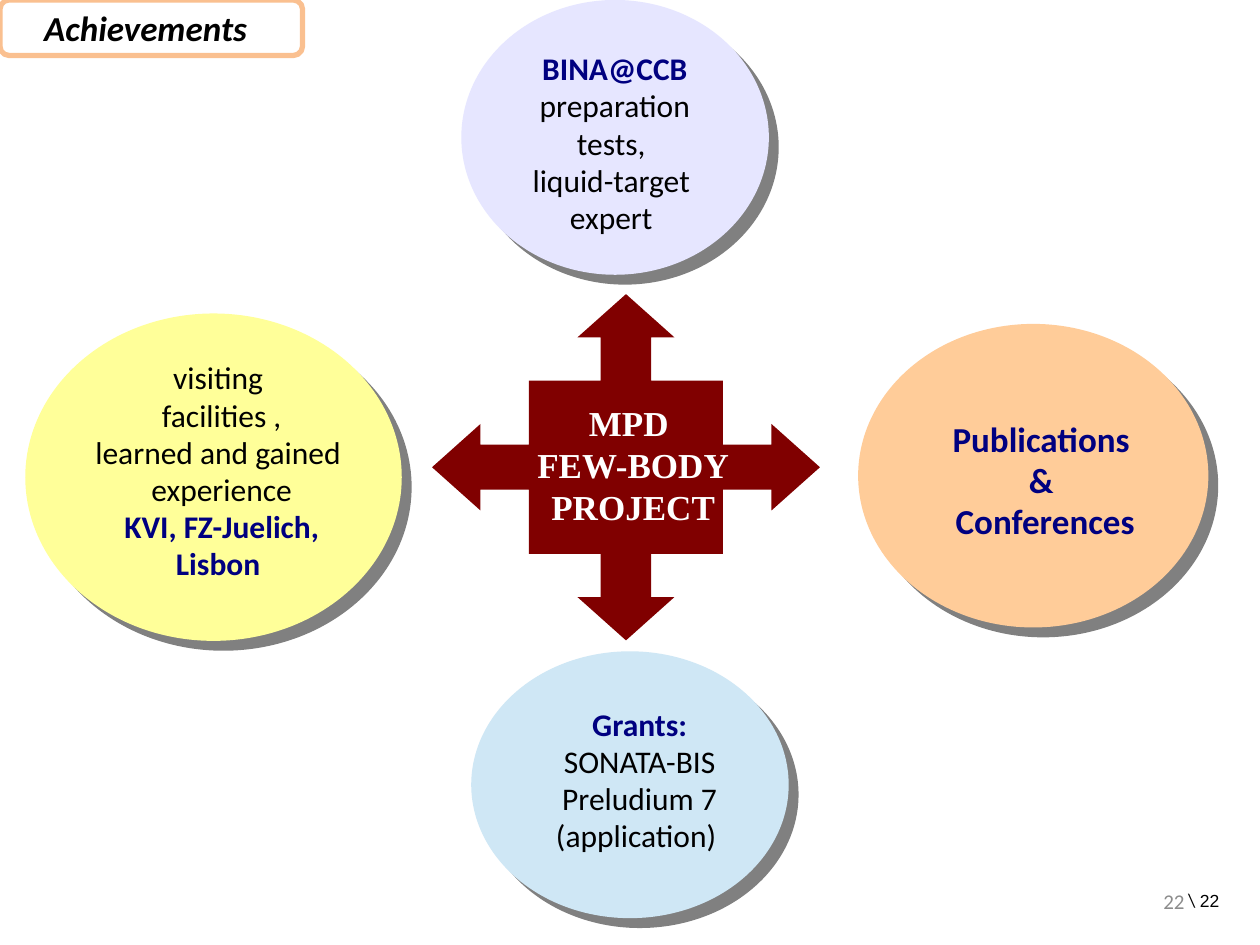
"""Build the Achievements slide: a central project cross with four themed bubbles."""
from lxml import etree
from pptx import Presentation, util as u
from pptx.dml.color import RGBColor
from pptx.enum import shapes, text
from pptx.oxml import ns

COLORS = {
    "black": "000000", "navy": "000080", "white": "FFFFFF", "maroon": "800000",
    "yellow": "FFFF99", "lavender": "E6E6FF", "peach": "FFCC99", "sky": "CFE7F5",
    "shadow": "808080", "frame": "FAC090", "number": "8C8C8C",
}


def write(frame, lines, size, font="Calibri", align=text.PP_ALIGN.CENTER, spacing=None):
    """Fill a text frame with (wording, colour, bold) lines."""
    frame.text = "\n".join(wording for wording, _, _ in lines)
    for paragraph, (_, color, bold) in zip(frame.paragraphs, lines):
        paragraph.alignment = align
        paragraph.line_spacing = spacing
        for run in paragraph.runs:
            run.font.name, run.font.size, run.font.bold = font, u.Pt(size), bold
            run.font.color.rgb = RGBColor.from_string(COLORS[color])


def add_shadow(effects, color, blur, distance):
    """Add an outer shadow at 45 degrees to an effect list."""
    shadow = etree.SubElement(effects, ns.qn("a:outerShdw"), blurRad=str(u.Pt(blur)),
                              dist=str(u.Pt(distance)), dir="2700000")
    return etree.SubElement(shadow, ns.qn("a:srgbClr"), val=COLORS[color])


deck = Presentation()
deck.slide_width, deck.slide_height = u.Cm(25.4), u.Cm(19.05)
slide = deck.slides.add_slide(deck.slide_layouts[5])
items = slide.shapes

side = [(-0.5, -0.5), (-0.13, -0.5), (-0.13, -0.75), (-0.25, -0.75),
        (0, -1), (0.25, -0.75), (0.13, -0.75), (0.13, -0.5)]
outline = []
for _ in range(4):
    outline += side
    side = [(-y, x) for x, y in side]
points = [(u.Cm(12.62 + 3.91 * x), u.Cm(9.42 + 3.49 * y)) for x, y in outline]
builder = items.build_freeform(*points[0])
builder.add_line_segments(points[1:], close=True)
cross = builder.convert_to_shape()
cross.shadow.inherit = False
cross.fill.solid()
cross.fill.fore_color.rgb = RGBColor.from_string(COLORS["maroon"])
cross.line.fill.background()

bubbles = [
    ("yellow", (0.51, 6.32, 7.59, 6.6), (0.71, 7.14, 7.52, 5.49), 18,
     [("visiting ", "black", False), ("facilities ,", "black", False),
      ("learned and gained ", "black", False), ("experience", "black", False),
      ("KVI, FZ-Juelich,", "navy", True), ("Lisbon ", "navy", True)]),
    ("lavender", (9.3, 0, 6.2, 5.54), (9.5, 0.91, 5.79, 3.94), 18,
     [("BINA@CCB", "navy", True), ("preparation", "black", False),
      ("tests, ", "black", False), ("liquid-target ", "black", False),
      ("expert ", "black", False)]),
    ("peach", (17.3, 6.53, 7.06, 6.12), (18.69, 8.33, 4.6, 2.79), 20,
     [("Publications", "navy", True), ("&", "navy", True),
      (" Conferences", "navy", True)]),
    ("sky", (9.5, 13.13, 6.4, 5.38), (10.49, 14.12, 4.67, 3.2), 18,
     [(" Grants:", "navy", True), (" SONATA-BIS", "black", False),
      (" Preludium 7", "black", False), ("(application)", "black", False)]),
]
for color, oval_place, words_place, size, lines in bubbles:
    oval = items.add_shape(shapes.MSO_SHAPE.OVAL, *map(u.Cm, oval_place))
    oval.fill.solid()
    oval.fill.fore_color.rgb = RGBColor.from_string(COLORS[color])
    oval.line.fill.background()
    oval.shadow.inherit = False
    add_shadow(oval.element.spPr.find(ns.qn("a:effectLst")), "shadow", 0, 8)
    words = items.add_textbox(*map(u.Cm, words_place)).text_frame
    words.word_wrap = True
    write(words, lines, size, spacing=0.98)

project = items.add_textbox(u.Cm(10.11), u.Cm(7.92), u.Cm(5.31), u.Cm(3.18)).text_frame
project.word_wrap = False
project.margin_top = u.Cm(0.18)
write(project, [("MPD ", "white", True), ("FEW-BODY", "white", True),
                ("PROJECT", "white", True)], 20, "Times New Roman")

frame = items.add_shape(shapes.MSO_SHAPE.ROUNDED_RECTANGLE, 0, 0, u.Cm(6.1), u.Cm(1.12))
frame.shadow.inherit = False
frame.fill.background()
frame.line.color.rgb = RGBColor.from_string(COLORS["frame"])
frame.line.width = u.Pt(3)

title = items.title
title.left, title.top, title.width, title.height = 0, 0, u.Cm(5.44), u.Cm(1.12)
heading = title.text_frame
heading.word_wrap = False
heading.auto_size = text.MSO_AUTO_SIZE.NONE
heading.vertical_anchor = text.MSO_ANCHOR.TOP
heading.margin_left = u.Cm(0.89)
write(heading, [("Achievements", "black", True)], 20, align=text.PP_ALIGN.LEFT)
heading_font = heading.paragraphs[0].runs[0].font
heading_font.italic = True
effects = etree.Element(ns.qn("a:effectLst"))
glow = add_shadow(effects, "black", 3, 3)
etree.SubElement(glow, ns.qn("a:alpha"), val="43000")
heading.paragraphs[0].runs[0].font.fill.fore_color.rgb
heading_props = heading.paragraphs[0].runs[0]._r.get_or_add_rPr()
heading_props.find(ns.qn("a:solidFill")).addnext(effects)

number = items.add_textbox(u.Cm(18.21), u.Cm(17.65), u.Cm(5.92), u.Cm(1.02)).text_frame
number.word_wrap = True
number.vertical_anchor = text.MSO_ANCHOR.MIDDLE
write(number, [("22", "number", False)], 12, align=text.PP_ALIGN.RIGHT)

total = items.add_textbox(u.Cm(23.7), u.Cm(17.78), u.Cm(1.19), u.Cm(0.74)).text_frame
total.word_wrap = False
write(total, [("\\ ", "black", False)], 11, align=text.PP_ALIGN.LEFT)
count = total.paragraphs[0].add_run()
count.text = "22"
count.font.name, count.font.size = "Arial", u.Pt(10)
count.font.color.rgb = RGBColor.from_string(COLORS["black"])

deck.save("out.pptx")
